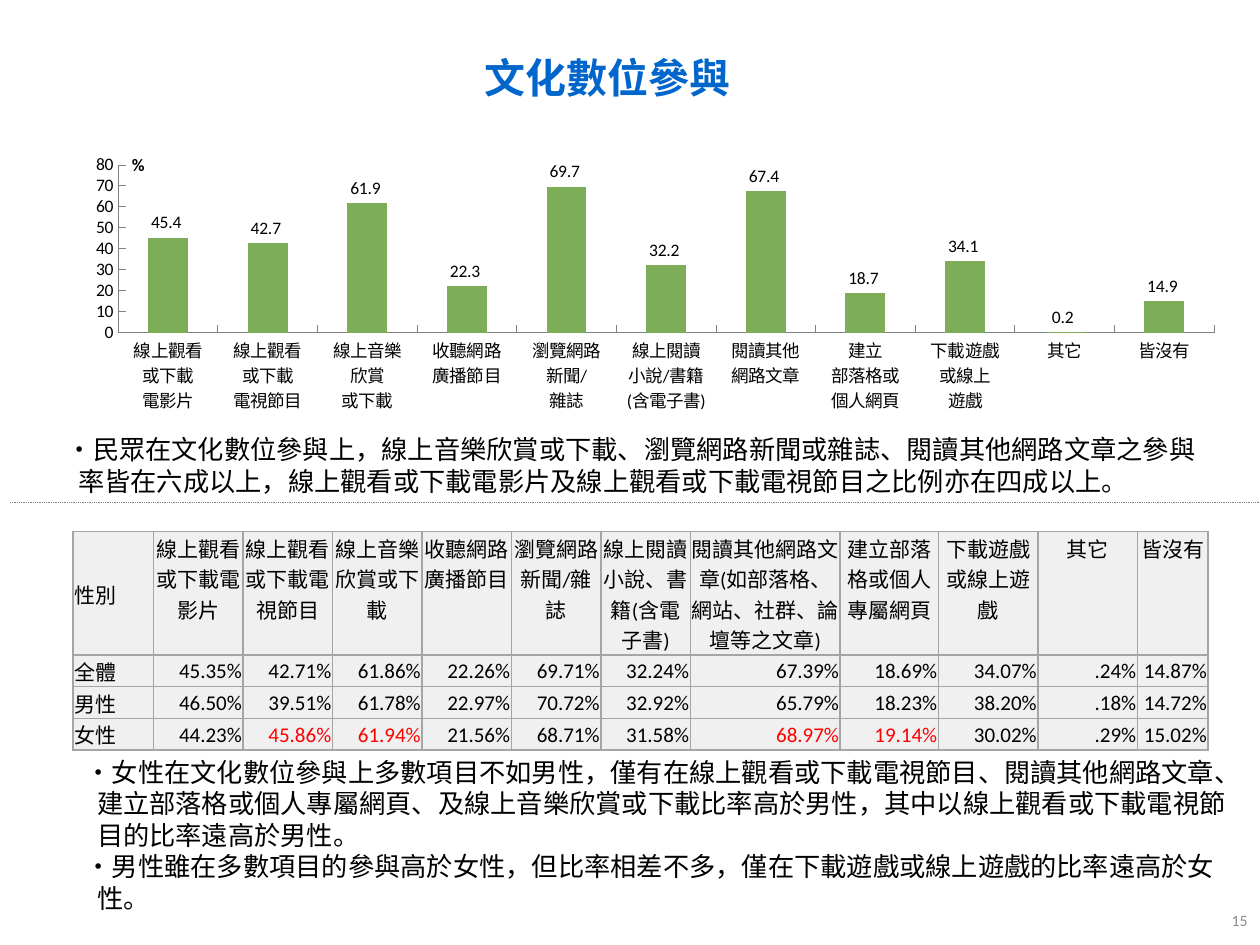
from lxml import etree
from pptx import Presentation, util as u
from pptx.chart.data import CategoryChartData
from pptx.dml.color import RGBColor
from pptx.enum import chart as ch, dml, shapes, text
from pptx.oxml import parse_xml
from pptx.oxml.ns import nsdecls, qn

COLORS = {"title": "0066CC", "text": "000000", "page": "8C8C8C", "bar": "7DAD59",
          "axis": "808080", "border": "A5A5A5", "cell": "F0F0F0", "higher": "FF0000"}
FONT, CJK = "Calibri", "Noto Sans CJK SC"


def style(font, size, color="text", bold=False, name=FONT):
    font.size, font.bold, font.name = u.Pt(size), bold, name
    font.color.rgb = RGBColor.from_string(COLORS[color])


def place(sp, left, top, width, height):
    sp.left, sp.top, sp.width, sp.height = map(u.Inches, (left, top, width, height))


prs = Presentation()
prs.slide_width, prs.slide_height = u.Inches(10), u.Inches(7.5)
s = prs.slides.add_slide(prs.slide_layouts[3])
title, *bodies = s.placeholders

# Title and page number
place(title, 1.48, 0.36, 6.68, 0.5)
page = s.shapes.add_textbox(0, 0, 0, 0)
place(page, 7.67, 7.1, 2.33, 0.4)
for sp, words, align, look in (
        (title, "文化數位參與", text.PP_ALIGN.CENTER, (23.4, "title", True, CJK)),
        (page, "15", text.PP_ALIGN.RIGHT, (9, "page"))):
    tf = sp.text_frame
    tf.text = words
    tf.word_wrap, tf.auto_size = True, text.MSO_AUTO_SIZE.NONE
    tf.vertical_anchor = text.MSO_ANCHOR.MIDDLE
    p = tf.paragraphs[0]
    p.alignment = align
    style(p.runs[0].font, *look)

# Findings
findings = [
    ((0.43, 3.39, 9.29, 0.6),
     ["•民眾在文化數位參與上，線上音樂欣賞或下載、瀏覽網路新聞或雜誌、閱讀其他網路文章之參與率皆在六成以上，"
      "線上觀看或下載電影片及線上觀看或下載電視節目之比例亦在四成以上。"]),
    ((0.58, 5.95, 9.29, 1.1),
     ["•女性在文化數位參與上多數項目不如男性，僅有在線上觀看或下載電視節目、閱讀其他網路文章、建立部落格或個人專屬網頁、"
      "及線上音樂欣賞或下載比率高於男性，其中以線上觀看或下載電視節目的比率遠高於男性。",
      "•男性雖在多數項目的參與高於女性，但比率相差不多，僅在下載遊戲或線上遊戲的比率遠高於女性。"]),
]
for sp, (box, lines) in zip(bodies, findings):
    place(sp, *box)
    tf = sp.text_frame
    tf.text = "\n".join(lines)
    tf.word_wrap, tf.auto_size = True, text.MSO_AUTO_SIZE.NONE
    for p in tf.paragraphs:
        p.line_spacing, p.space_before = u.Pt(18), u.Pt(0)
        pPr = p._p.get_or_add_pPr()
        pPr.set("marL", str(u.Inches(0.09)))
        pPr.set("indent", str(u.Inches(-0.09)))
        etree.SubElement(pPr, qn("a:buNone"))
        style(p.runs[0].font, 15)

# Participation chart
data = CategoryChartData()
data.categories = [
    "線上觀看\n或下載\n電影片", "線上觀看\n或下載\n電視節目", "線上音樂\n欣賞\n或下載",
    "收聽網路\n廣播節目", "瀏覽網路\n新聞/\n雜誌", "線上閱讀\n小說/書籍\n(含電子書)",
    "閱讀其他\n網路文章", "建立\n部落格或\n個人網頁", "下載遊戲\n或線上\n遊戲", "其它", "皆沒有"]
data.add_series("Series 1", (45.4, 42.7, 61.9, 22.3, 69.7, 32.2, 67.4, 18.7, 34.1, 0.2, 14.9))
chart = s.shapes.add_chart(ch.XL_CHART_TYPE.COLUMN_CLUSTERED, u.Inches(0.51), u.Inches(1.19),
                           u.Inches(9.13), u.Inches(2.18), data).chart
chart.has_legend = chart.has_title = False
style(chart.font, 10)

plot = chart.plots[0]
plot.gap_width, plot.vary_by_categories = 150, False
fill = plot.series[0].format.fill
fill.solid()
fill.fore_color.rgb = RGBColor.from_string(COLORS["bar"])
plot.has_data_labels = True
labels = plot.data_labels
labels.show_value, labels.position = True, ch.XL_LABEL_POSITION.OUTSIDE_END
labels.number_format, labels.number_format_is_linked = r"#,##0.0_);[Red]\(#,##0.0\)", False
style(labels.font, 10)

value_axis = chart.value_axis
for axis in (chart.category_axis, value_axis):
    axis.has_major_gridlines = False
    axis.major_tick_mark = ch.XL_TICK_MARK.INSIDE
    axis.format.line.color.rgb = RGBColor.from_string(COLORS["axis"])
    axis.format.line.width = u.Pt(0.5)
    style(axis.tick_labels.font, 10)
value_axis.minimum_scale, value_axis.maximum_scale, value_axis.major_unit = 0, 80, 10
value_axis.tick_labels.number_format = "0"
value_axis.tick_labels.number_format_is_linked = False
tf = value_axis.axis_title.text_frame
tf.text = "%"
style(tf.paragraphs[0].runs[0].font, 10, bold=True)
tf._txBody.find(qn("a:bodyPr")).set("rot", "0")

LAYOUT = '<c:layout %s><c:manualLayout>%s</c:manualLayout></c:layout>'
for parent, index, settings in (
        (chart._chartSpace.chart.plotArea, 0,
         dict(layoutTarget="inner", xMode="edge", yMode="edge", x=0.047, y=0.055, w=0.953, h=0.611)),
        (value_axis.axis_title._element, 1, dict(xMode="edge", yMode="edge", x=0.056, y=0))):
    for old in parent.findall(qn("c:layout")):
        parent.remove(old)
    items = "".join(f'<c:{k} val="{v}"/>' for k, v in settings.items())
    parent.insert(index, parse_xml(LAYOUT % (nsdecls("c"), items)))

# Divider
line = s.shapes.add_connector(shapes.MSO_CONNECTOR.STRAIGHT, u.Inches(0.08), u.Inches(3.99),
                              u.Inches(10.08), u.Inches(3.99))
line.line.color.rgb = RGBColor.from_string(COLORS["axis"])
line.line.width, line.line.dash_style = u.Pt(0.5), dml.MSO_LINE.ROUND_DOT
etree.SubElement(line._element.spPr, qn("a:effectLst"))

# Table by gender
rows = [
    ["性別", "線上觀看或下載電影片", "線上觀看或下載電視節目", "線上音樂欣賞或下載", "收聽網路廣播節目",
     "瀏覽網路新聞/雜誌", "線上閱讀小說、書籍(含電子書)",
     "閱讀其他網路文章(如部落格、網站、社群、論壇等之文章)", "建立部落格或個人專屬網頁",
     "下載遊戲或線上遊戲", "其它", "皆沒有"],
    "全體 45.35% 42.71% 61.86% 22.26% 69.71% 32.24% 67.39% 18.69% 34.07% .24% 14.87%".split(),
    "男性 46.50% 39.51% 61.78% 22.97% 70.72% 32.92% 65.79% 18.23% 38.20% .18% 14.72%".split(),
    "女性 44.23% 45.86% 61.94% 21.56% 68.71% 31.58% 68.97% 19.14% 30.02% .29% 15.02%".split(),
]
red_columns = (2, 3, 7, 8)
widths = [0.64] + [0.71] * 6 + [1.19, 0.78, 0.79, 0.79, 0.56]
heights = [0.79, 0.19, 0.18, 0.18]
table = s.shapes.add_table(len(rows), len(widths), u.Inches(0.58), u.Inches(4.22),
                           u.Inches(9), u.Inches(1.44)).table
for col, width in zip(table.columns, widths):
    col.width = u.Inches(width)
for row, height in zip(table.rows, heights):
    row.height = u.Inches(height)

BORDER = ('<a:%s %s w="12700"><a:solidFill><a:srgbClr val="' + COLORS["border"]
          + '"/></a:solidFill></a:%s>')
for i, row in enumerate(rows):
    for j, words in enumerate(row):
        cell = table.cell(i, j)
        cell.text = words
        cell.margin_left = cell.margin_right = cell.margin_top = u.Inches(0.01)
        cell.margin_bottom = 0
        is_header = i == 0 and j > 0
        cell.vertical_anchor = text.MSO_ANCHOR.TOP if is_header else text.MSO_ANCHOR.MIDDLE
        p = cell.text_frame.paragraphs[0]
        p.alignment = (text.PP_ALIGN.LEFT if j == 0 else
                       text.PP_ALIGN.CENTER if is_header else text.PP_ALIGN.RIGHT)
        style(p.runs[0].font, 12, "higher" if i == 3 and j in red_columns else "text")
        cell.fill.solid()
        cell.fill.fore_color.rgb = RGBColor.from_string(COLORS["cell"])
        for k, side in enumerate(("lnL", "lnR", "lnT", "lnB")):
            cell._tc.tcPr.insert(k, parse_xml(BORDER % (side, nsdecls("a"), side)))

prs.save("out.pptx")
